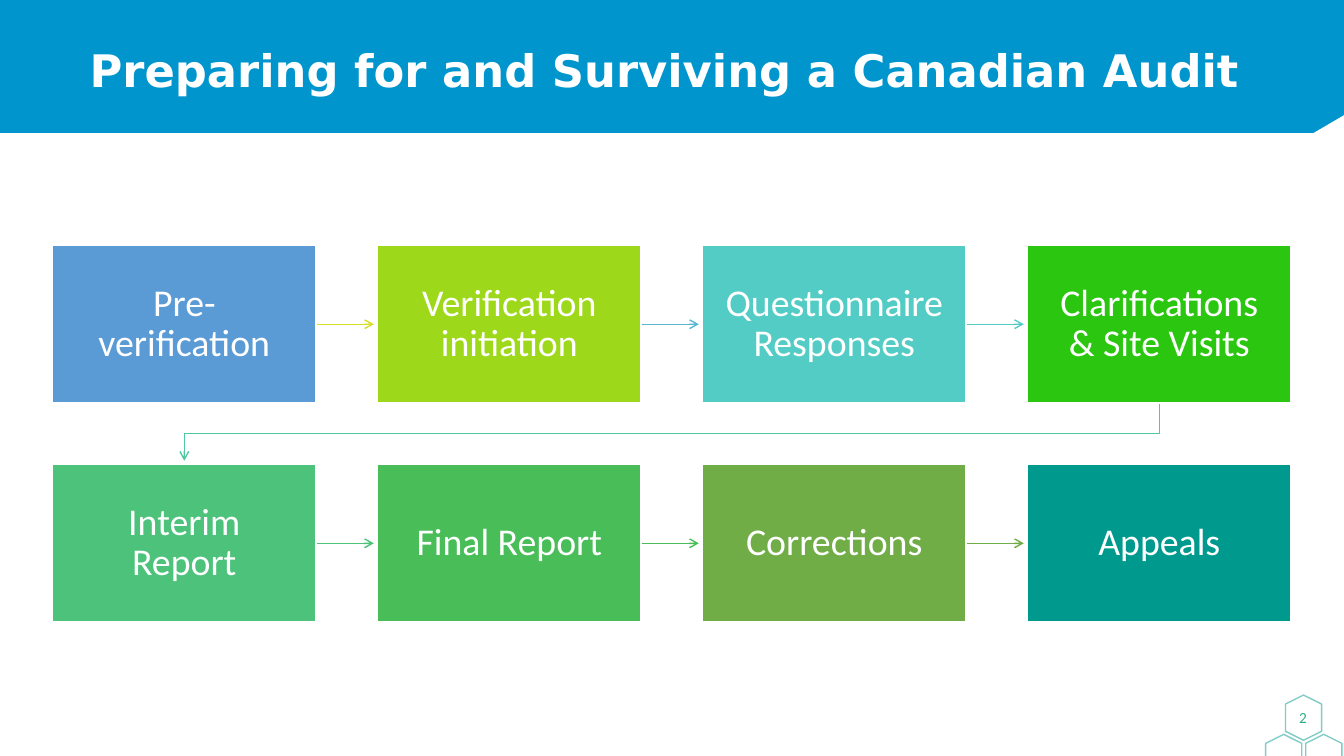
from pptx import Presentation
from pptx.dml.color import RGBColor
from pptx.enum.shapes import MSO_CONNECTOR as Connector, MSO_SHAPE as Shape
from pptx.enum.text import MSO_ANCHOR as Anchor, PP_ALIGN as Align
from pptx.oxml.ns import qn
from pptx.util import Cm, Pt
from lxml.etree import SubElement

COLOURS = {
    "header": "0096CD", "white": "FFFFFF", "number": "2DAF88",
    "blue": "5B9BD5", "lime": "9DD91A", "aqua": "53CCC5", "bright": "2BC60F",
    "mint": "4CC27B", "green": "48BD58", "olive": "70AD47", "teal": "00998D",
    "yellow": "D7DF23", "sky": "57B7D1", "sea": "4FC7A0",
}
TITLE = "Preparing for and Surviving a Canadian Audit"
PAGE_NUMBER = "2"
# label, box colour, colour of the arrow to the next step
STEPS = [
    ("Pre-verification", "blue", "yellow"),
    ("Verification initiation", "lime", "sky"),
    ("Questionnaire Responses", "aqua", "aqua"),
    ("Clarifications & Site Visits", "bright", "sea"),
    ("Interim Report", "mint", "mint"),
    ("Final Report", "green", "green"),
    ("Corrections", "olive", "olive"),
    ("Appeals", "teal", None),
]
HEADER_OUTLINE = [(0, 0), (33.87, 0), (33.87, 2.9), (33.1, 3.35), (0, 3.35)]
HEXAGONS = [(32.28, 17.63), (32.79, 18.62), (31.78, 18.62)]
HEXAGON_SIZE = (1.14, 0.91)

COLUMNS = 4
GRID_LEFT, GRID_TOP = 1.32, 6.18
BOX_WIDTH, BOX_HEIGHT = 6.65, 3.98
COLUMN_STEP, ROW_STEP = 8.19, 5.52
ARROW_LENGTH = 1.45
BOX_INSET = 0.53


def colour(name):
    return RGBColor.from_string(COLOURS[name])


def set_line(shape, name):
    shape.line.color.rgb = colour(name)
    shape.line.width = Pt(1)


def add_outline(slide, points, close):
    (first, *rest) = [(Cm(x), Cm(y)) for x, y in points]
    builder = slide.shapes.build_freeform(*first)
    builder.add_line_segments(rest, close=close)
    shape = builder.convert_to_shape()
    shape.shadow.inherit = False
    return shape


def add_arrowhead(shape):
    SubElement(shape.line._get_or_add_ln(), qn("a:tailEnd"), type="arrow")


def write(shape, text, size, name, font="Calibri", align=Align.CENTER,
          bold=False, spacing=None):
    frame = shape.text_frame
    frame.word_wrap = True
    frame.vertical_anchor = Anchor.MIDDLE
    paragraph = frame.paragraphs[0]
    paragraph.text = text
    paragraph.alignment = align
    paragraph.line_spacing = spacing
    paragraph.font.name = font
    paragraph.font.size = Pt(size)
    paragraph.font.bold = bold
    paragraph.font.color.rgb = colour(name)
    return frame


def add_text(slide, left, top, width, height, *args, **options):
    box = slide.shapes.add_textbox(Cm(left), Cm(top), Cm(width), Cm(height))
    return write(box, *args, **options)


def add_frame(slide):
    """Draw the header band, the title and the corner hexagons."""
    header = add_outline(slide, HEADER_OUTLINE, True)
    header.fill.solid()
    header.fill.fore_color.rgb = colour("header")
    header.line.fill.background()

    for left, top in HEXAGONS:
        hexagon = slide.shapes.add_shape(
            Shape.HEXAGON, Cm(left), Cm(top), *map(Cm, HEXAGON_SIZE))
        hexagon.rotation = 90
        hexagon.shadow.inherit = False
        hexagon.fill.background()
        set_line(hexagon, "teal")
        solid = hexagon.line._get_or_add_ln().find(qn("a:solidFill"))
        SubElement(solid[0], qn("a:alpha"), val="50000")

    add_text(slide, 2.01, 0.48, 29.87, 2.72, TITLE, 32, "white",
             font="DejaVu Sans", align=Align.LEFT, bold=True, spacing=0.9)


def add_arrow(slide, left, top, column, name):
    """Lead to the box on the right, or down to the start of the next row."""
    if column < COLUMNS - 1:
        x, y = left + BOX_WIDTH, top + BOX_HEIGHT / 2
        arrow = slide.shapes.add_connector(
            Connector.STRAIGHT, Cm(x), Cm(y), Cm(x + ARROW_LENGTH), Cm(y))
        SubElement(arrow._element.spPr, qn("a:effectLst"))
    else:
        start_x, end_x = left + BOX_WIDTH / 2, GRID_LEFT + BOX_WIDTH / 2
        start_y = top + BOX_HEIGHT
        middle_y = top + (BOX_HEIGHT + ROW_STEP) / 2
        points = [(start_x, start_y), (start_x, middle_y),
                  (end_x, middle_y), (end_x, start_y + ARROW_LENGTH)]
        arrow = add_outline(slide, points, False)
        arrow.fill.background()
    set_line(arrow, name)
    add_arrowhead(arrow)


def add_step(slide, index, label, fill, arrow):
    row, column = divmod(index, COLUMNS)
    left = GRID_LEFT + column * COLUMN_STEP
    top = GRID_TOP + row * ROW_STEP
    if arrow:
        add_arrow(slide, left, top, column, arrow)
    box = slide.shapes.add_shape(
        Shape.RECTANGLE, Cm(left), Cm(top), Cm(BOX_WIDTH), Cm(BOX_HEIGHT))
    box.shadow.inherit = False
    box.fill.solid()
    box.fill.fore_color.rgb = colour(fill)
    set_line(box, "white")
    frame = write(box, label, 27, "white", spacing=0.9)
    frame.margin_left = frame.margin_right = Cm(BOX_INSET)
    frame.margin_top = frame.margin_bottom = Cm(BOX_INSET)


def main():
    presentation = Presentation()
    presentation.slide_width, presentation.slide_height = Cm(33.87), Cm(19.05)
    slide = presentation.slides.add_slide(presentation.slide_layouts[6])
    add_frame(slide)
    for index, step in enumerate(STEPS):
        add_step(slide, index, *step)
    add_text(slide, 32.33, 17.65, 1.02, 0.84, PAGE_NUMBER, 11, "number")
    presentation.save("out.pptx")


if __name__ == "__main__":
    main()
